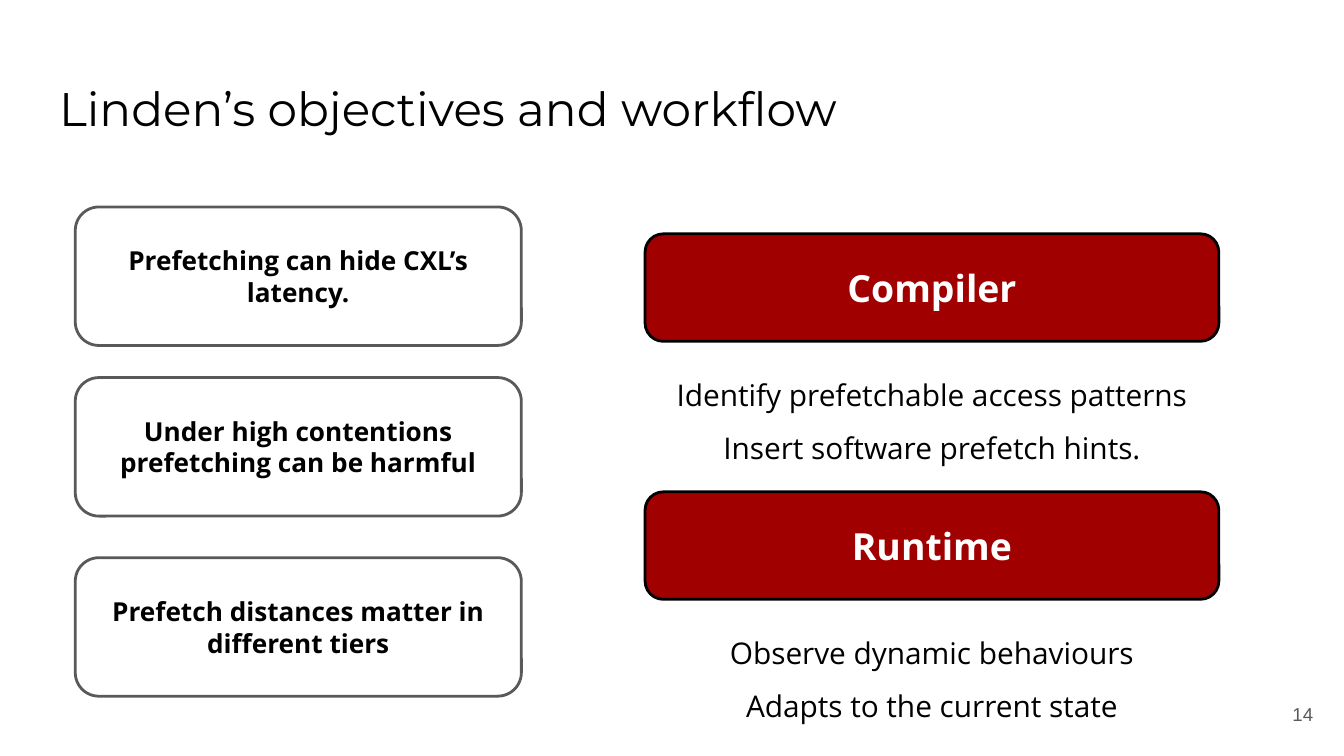
from pptx import Presentation
from pptx.dml.color import RGBColor
from pptx.enum.shapes import MSO_SHAPE as Preset
from pptx.enum.text import MSO_ANCHOR as Anchor, MSO_AUTO_SIZE as AutoSize, PP_ALIGN as Align
from pptx.util import Pt

BLACK = RGBColor(0x00, 0x00, 0x00)
WHITE = RGBColor(0xFF, 0xFF, 0xFF)
GREY = RGBColor(0x59, 0x59, 0x59)
RED = RGBColor(0xA0, 0x00, 0x00)

TITLE_FONT = "Montserrat"
BODY_FONT = "Open Sans"
NUMBER_FONT = "Arial"

OBJECTIVES = [
    (0, "Prefetching can hide CXL’s latency."),
    (91.4, "Under high contentions prefetching can be harmful"),
    (187.9, "Prefetch distances matter in different tiers"),
]
COMPILER_TASKS = ["Identify prefetchable access patterns", "Insert software prefetch hints."]
RUNTIME_TASKS = ["Observe dynamic behaviours", "Adapts to the current state"]


def write_text(shape, lines, size, color, font=BODY_FONT, bold=False,
               align=Align.CENTER, anchor=Anchor.TOP, spacing=None):
    frame = shape.text_frame
    frame.word_wrap = True
    frame.auto_size = AutoSize.NONE
    frame.vertical_anchor = anchor
    frame.margin_left = frame.margin_right = Pt(7.2)
    frame.margin_top = frame.margin_bottom = Pt(7.2)
    for index, line in enumerate(lines):
        paragraph = frame.add_paragraph() if index else frame.paragraphs[0]
        paragraph.alignment = align
        paragraph.line_spacing = spacing
        run = paragraph.add_run()
        run.text = line
        run.font.name = font
        run.font.size = Pt(size)
        run.font.bold = bold
        run.font.color.rgb = color


def add_text(slide, left, top, width, height, lines, size, color, **style):
    box = slide.shapes.add_textbox(Pt(left), Pt(top), Pt(width), Pt(height))
    write_text(box, lines, size, color, **style)


def add_card(slide, left, top, width, height, label, size, fill, line, color):
    card = slide.shapes.add_shape(Preset.ROUNDED_RECTANGLE, Pt(left), Pt(top), Pt(width), Pt(height))
    card.adjustments[0] = 0.17
    card.shadow.inherit = False
    card.fill.solid()
    card.fill.fore_color.rgb = fill
    card.line.color.rgb = line
    card.line.width = Pt(1.5)
    write_text(card, [label], size, color, bold=True, anchor=Anchor.MIDDLE)


def place_title(slide, left, top, width, height, text):
    title = slide.shapes.title
    title.left, title.top, title.width, title.height = Pt(left), Pt(top), Pt(width), Pt(height)
    write_text(title, [text], 25.2, BLACK, font=TITLE_FONT, align=Align.LEFT)


def add_objectives(slide, left, top, width, card_height):
    for offset, label in OBJECTIVES:
        add_card(slide, left, top + offset, width, card_height, label, 14, WHITE, GREY, BLACK)


def add_stage(slide, left, top, width, height, name, tasks, inset=0):
    header_height = 57.6
    tasks_top = header_height + 2
    add_text(slide, left + inset, top + tasks_top, width - 2 * inset, height - tasks_top,
             tasks, 16, BLACK, spacing=1.5)
    add_card(slide, left, top, width, header_height, name, 20, RED, BLACK, WHITE)


def add_page_number(slide, left, top, width, height, number):
    add_text(slide, left, top, width, height, [number], 10, GREY,
             font=NUMBER_FONT, align=Align.RIGHT, anchor=Anchor.MIDDLE)


def main():
    presentation = Presentation()
    presentation.slide_width = Pt(720)
    presentation.slide_height = Pt(405)
    slide = presentation.slides.add_slide(presentation.slide_layouts[5])
    place_title(slide, 24.5, 35.3, 671, 45.4, "Linden’s objectives and workflow")
    add_objectives(slide, 40.3, 110.9, 239, 74.2)
    add_stage(slide, 345.6, 125.3, 307.4, 153.2, "Compiler", COMPILER_TASKS)
    add_stage(slide, 345.6, 263.5, 307.4, 178, "Runtime", RUNTIME_TASKS, inset=18)
    add_page_number(slide, 667.4, 367.2, 43.2, 31, "14")
    presentation.save("out.pptx")


if __name__ == "__main__":
    main()
